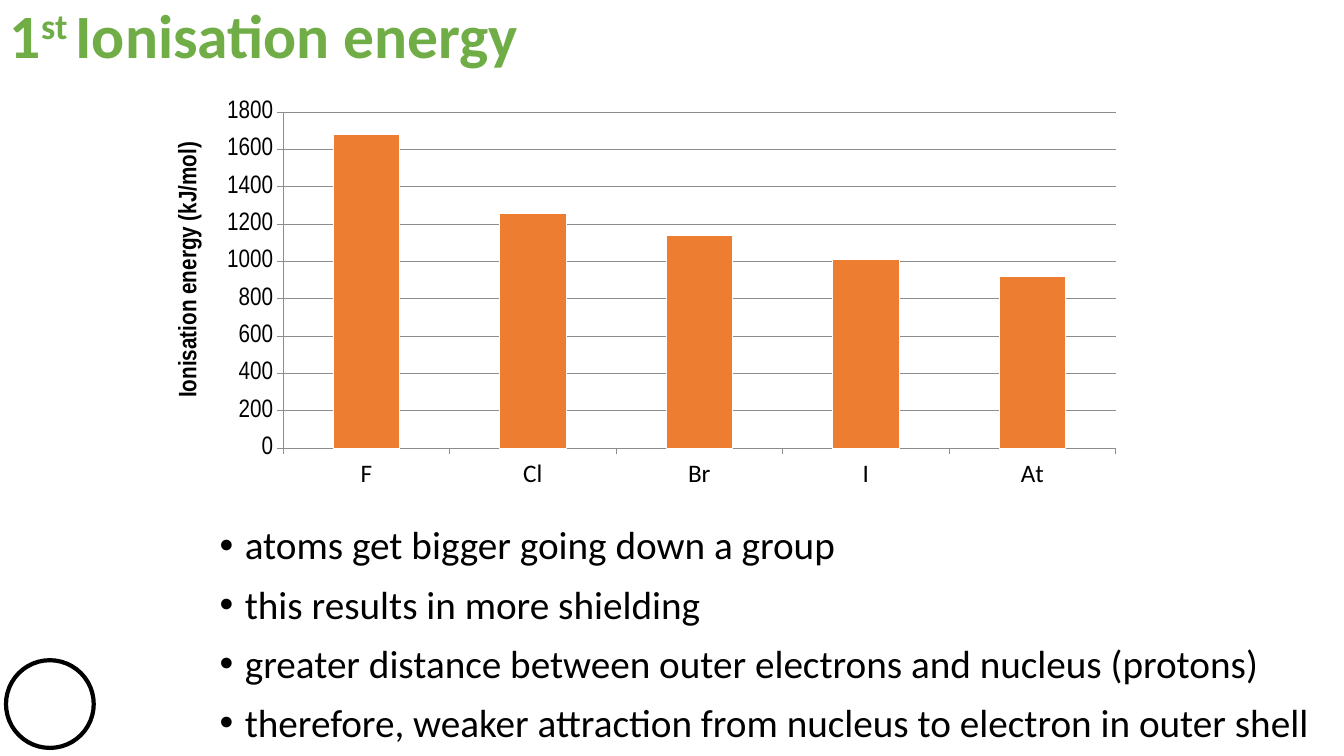
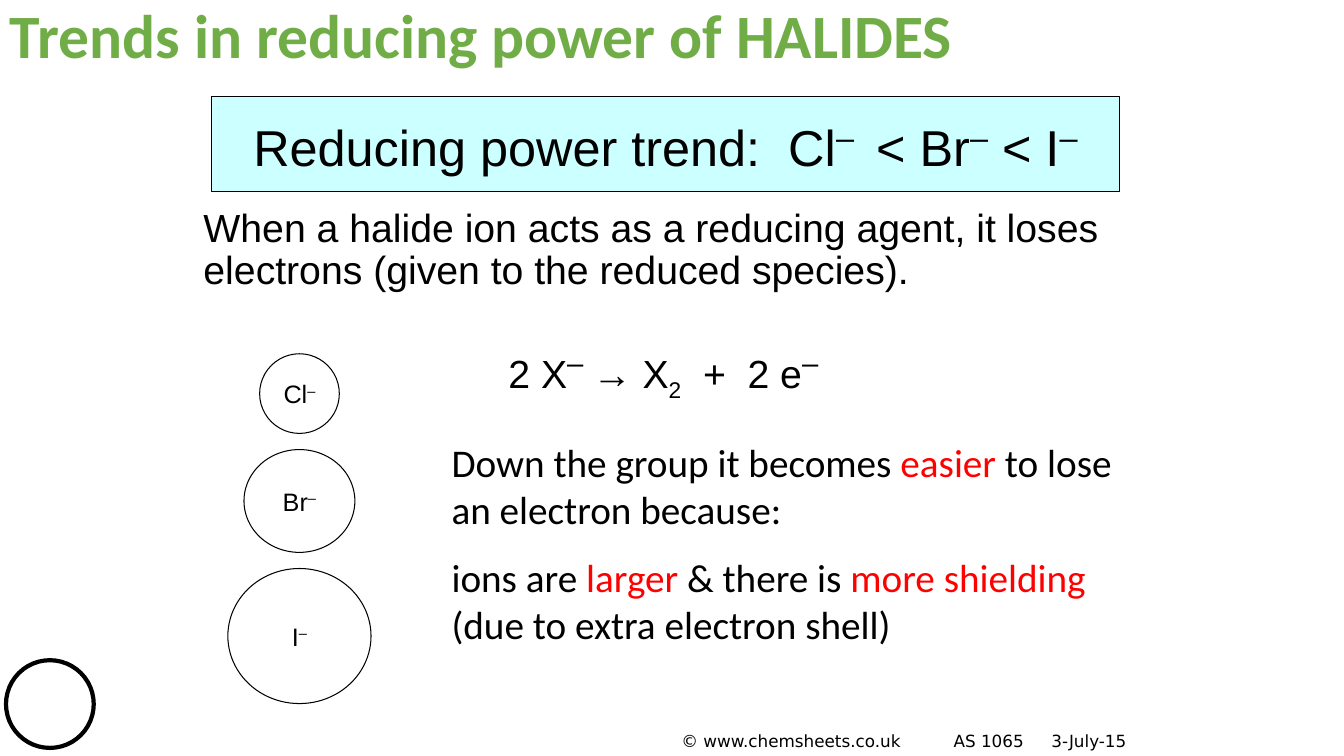
from dataclasses import dataclass

from lxml import etree
from pptx import Presentation
from pptx.chart.data import CategoryChartData
from pptx.dml.color import RGBColor
from pptx.enum.chart import XL_CHART_TYPE as ChartType, XL_TICK_MARK as TickMark
from pptx.enum.shapes import MSO_SHAPE as Preset
from pptx.enum.text import MSO_ANCHOR as Anchor, PP_ALIGN as Align
from pptx.oxml.ns import qn
from pptx.util import Inches, Pt


@dataclass(frozen=True)
class Theme:
    """Colours, fonts and type sizes shared by the slides."""

    black: str = "000000"
    white: str = "FFFFFF"
    green: str = "70AD47"
    orange: str = "ED7D31"
    red: str = "FF0000"
    pale_cyan: str = "CCFFFF"
    grey: str = "8C8C8C"
    heading_font: str = "Calibri"
    science_font: str = "Arial"
    axis_font: str = "Arial Narrow"
    footer_font: str = "DejaVu Sans"
    heading_size: int = 44
    trend_size: int = 36
    body_size: int = 28
    label_size: int = 18
    footer_size: int = 12


THEME = Theme()
RED = {"color": THEME.red}


def raised(size=None):
    """Return the run format for a superscript."""
    return {"baseline": 30, "size": size}


def style_font(font, name=None, size=None, color=None, bold=None):
    """Apply the given values to a font."""
    values = {"name": name, "size": Pt(size) if size else None, "bold": bold}
    for attribute, value in values.items():
        if value is not None:
            setattr(font, attribute, value)
    if color:
        font.color.rgb = RGBColor.from_string(color)


def style_line(line, color, width):
    """Give a line its colour and width."""
    line.color.rgb = RGBColor.from_string(color)
    line.width = Pt(width)


def fill_solid(fill, color):
    """Make a fill one plain colour."""
    fill.solid()
    fill.fore_color.rgb = RGBColor.from_string(color)


def write_paragraph(paragraph, runs, base, **layout):
    """Write runs, each a string or a pair of text and format, on a base format."""
    for attribute, value in layout.items():
        setattr(paragraph, attribute, value)
    for item in runs:
        text, changes = (item, {}) if isinstance(item, str) else item
        settings = base | {key: value for key, value in changes.items() if value}
        baseline = settings.pop("baseline", 0)
        run = paragraph.add_run()
        run.text = text
        style_font(run.font, **settings)
        if baseline:
            run._r.get_or_add_rPr().set("baseline", str(baseline * 1000))


def add_text(slide, box, paragraphs, base, anchor=Anchor.TOP, **layout):
    """Add a wrapping text box and return its paragraphs."""
    frame = slide.shapes.add_textbox(*map(Inches, box)).text_frame
    frame.word_wrap = True
    frame.vertical_anchor = anchor
    for index, runs in enumerate(paragraphs):
        paragraph = frame.paragraphs[0] if index == 0 else frame.add_paragraph()
        write_paragraph(paragraph, runs, base, **layout)
    return frame.paragraphs


def add_outlined(slide, preset, box, fill, width, runs=(), base=None):
    """Add a black-outlined shape with centred text."""
    shape = slide.shapes.add_shape(preset, *map(Inches, box))
    shape.shadow.inherit = False
    fill_solid(shape.fill, fill)
    style_line(shape.line, THEME.black, width)
    if runs:
        frame = shape.text_frame
        frame.vertical_anchor = Anchor.MIDDLE
        for side in ("left", "right", "top", "bottom"):
            setattr(frame, f"margin_{side}", 0)
        write_paragraph(frame.paragraphs[0], runs, base, alignment=Align.CENTER)


def add_titled_slide(presentation, title):
    """Add a blank slide with the corner ring and green heading."""
    slide = presentation.slides.add_slide(presentation.slide_layouts[6])
    add_outlined(slide, Preset.OVAL, (0.06, 6.55, 0.87, 0.87), THEME.white, 3)
    base = {"name": THEME.heading_font, "size": THEME.heading_size,
            "color": THEME.green, "bold": True}
    add_text(slide, (0, 0, 12.42, 0.8), [title], base, line_spacing=0.9)
    return slide


def add_bullets(slide, box, items):
    """Add a bulleted list with hanging indents."""
    base = {"name": THEME.heading_font, "size": THEME.body_size, "color": THEME.black}
    paragraphs = add_text(slide, box, [[item] for item in items], base,
                          line_spacing=0.9, space_after=Pt(12))
    for paragraph in paragraphs:
        properties = paragraph._p.get_or_add_pPr()
        properties.set("marL", str(Inches(0.25)))
        properties.set("indent", str(-Inches(0.25)))
        etree.SubElement(properties, qn("a:buFont")).set("typeface", "Arial")
        etree.SubElement(properties, qn("a:buChar")).set("char", "•")


def set_layout(element, target=None, **fractions):
    """Place a chart part by fractions of the chart area."""
    layout = element.find(qn("c:layout"))
    if layout is None:
        layout = etree.Element(qn("c:layout"))
        element.insert(0, layout)
    manual = etree.SubElement(layout, qn("c:manualLayout"))
    settings = {"layoutTarget": target} if target else {}
    settings |= {"xMode": "edge", "yMode": "edge"} | fractions
    for tag, value in settings.items():
        etree.SubElement(manual, qn(f"c:{tag}")).set("val", str(value))


def add_energy_chart(slide, box, energies):
    """Add the column chart of ionisation energies."""
    data = CategoryChartData()
    data.categories = list(energies)
    data.add_series("Series 1", list(energies.values()))
    chart = slide.shapes.add_chart(ChartType.COLUMN_CLUSTERED,
                                   *map(Inches, box), data).chart
    chart.has_legend = False
    chart.has_title = False
    style_font(chart.font, THEME.heading_font, THEME.label_size, THEME.black)
    plot = chart.plots[0]
    plot.gap_width = 150
    plot.vary_by_categories = False
    series = plot.series[0]
    fill_solid(series.format.fill, THEME.orange)
    style_line(series.format.line, THEME.white, 0.5)

    values = chart.value_axis
    for axis, font in ((chart.category_axis, THEME.heading_font),
                       (values, THEME.axis_font)):
        axis.major_tick_mark = TickMark.OUTSIDE
        axis.minor_tick_mark = TickMark.NONE
        style_line(axis.format.line, THEME.grey, 0.5)
        style_font(axis.tick_labels.font, font, THEME.label_size, THEME.black)
    for attribute, value in {"minimum_scale": 0, "maximum_scale": 1800,
                             "major_unit": 200, "has_major_gridlines": True}.items():
        setattr(values, attribute, value)
    style_line(values.major_gridlines.format.line, THEME.grey, 0.5)
    title = values.axis_title
    write_paragraph(title.text_frame.paragraphs[0], ["Ionisation energy (kJ/mol)"],
                    {"name": THEME.axis_font, "size": THEME.label_size,
                     "color": THEME.black, "bold": True})
    set_layout(title._element, x=0.02, y=0.11)
    plot_area = chart._chartSpace.find(f".//{qn('c:plotArea')}")
    set_layout(plot_area, "inner", x=0.134, y=0.048, w=0.846, h=0.829)


def add_ions(slide, center, top, gap, ions):
    """Stack ion outlines of growing size on one vertical axis."""
    base = {"name": THEME.science_font, "size": THEME.label_size, "color": THEME.black}
    for symbol, width, height in ions:
        box = (center - width / 2, top, width, height)
        add_outlined(slide, Preset.OVAL, box, THEME.white, 0.75,
                     [symbol, ("–", raised())], base)
        top += height + gap


def add_footer(slide, box, parts, stops):
    """Add the footer with its parts on tab stops."""
    base = {"name": THEME.footer_font, "size": THEME.footer_size, "color": THEME.black}
    paragraph = add_text(slide, box, [["\t".join(parts)]], base)[0]
    tabs = etree.SubElement(paragraph._p.get_or_add_pPr(), qn("a:tabLst"))
    for stop in stops:
        tab = etree.SubElement(tabs, qn("a:tab"))
        tab.set("pos", str(Inches(stop)))
        tab.set("algn", "l")


def build_ionisation_slide(presentation):
    """Build the slide on first ionisation energy."""
    slide = add_titled_slide(presentation, ["1", ("st ", raised()), "Ionisation energy"])
    add_energy_chart(slide, (1.5, 0.92, 9.76, 4.02),
                     {"F": 1680, "Cl": 1260, "Br": 1140, "I": 1010, "At": 920})
    add_bullets(slide, (2.08, 5.17, 11.08, 2.3), [
        "atoms get bigger going down a group",
        "this results in more shielding",
        "greater distance between outer electrons and nucleus (protons)",
        "therefore, weaker attraction from nucleus to electron in outer shell",
    ])


def build_halides_slide(presentation):
    """Build the slide on the reducing power of halides."""
    slide = add_titled_slide(presentation, ["Trends in reducing power of HALIDES"])
    science = {"name": THEME.science_font, "size": THEME.body_size, "color": THEME.black}
    reason = science | {"name": THEME.heading_font}
    minus = ("–", raised(40))
    add_outlined(slide, Preset.RECTANGLE, (2.1, 0.96, 9, 0.94), THEME.pale_cyan, 0.75,
                 ["Reducing power trend:  Cl", minus, (" ", raised()),
                  " < Br", minus, " < I", minus],
                 science | {"size": THEME.trend_size})
    add_text(slide, (1.92, 2.02, 9.4, 0.95),
             [["When a halide ion acts as a reducing agent, it loses "
               "electrons (given to the reduced species)."]],
             science, line_spacing=0.9)
    charge = ("–", raised(36))
    add_text(slide, (4.38, 3.32, 4.4, 0.7),
             [["2 X", charge, (" ", raised(40)), "→ X", ("2", {"baseline": -25}),
               "  +  2 e", charge]],
             science, Anchor.MIDDLE, line_spacing=0.9, alignment=Align.CENTER)
    add_text(slide, (4.38, 4.3, 7.01, 2.17),
             [["Down the group it becomes ", ("easier", RED),
               " to lose an electron because:"],
              ["ions are ", ("larger", RED), " & there is ", ("more shielding", RED),
               " (due to extra electron shell)"]],
             reason, space_after=Pt(14.6))
    add_ions(slide, 2.97, 3.51, 0.16,
             [("Cl", 0.79, 0.79), ("Br", 1.1, 1.02), ("I", 1.42, 1.34)])
    add_footer(slide, (6.66, 7.2, 5.04, 0.3),
               ["© www.chemsheets.co.uk", "AS 1065", "3-July-15"], (2.7, 3.67))


def main():
    """Build and save the presentation."""
    presentation = Presentation()
    presentation.slide_width = Inches(13.33)
    presentation.slide_height = Inches(7.5)
    build_ionisation_slide(presentation)
    build_halides_slide(presentation)
    presentation.save("out.pptx")


if __name__ == "__main__":
    main()
